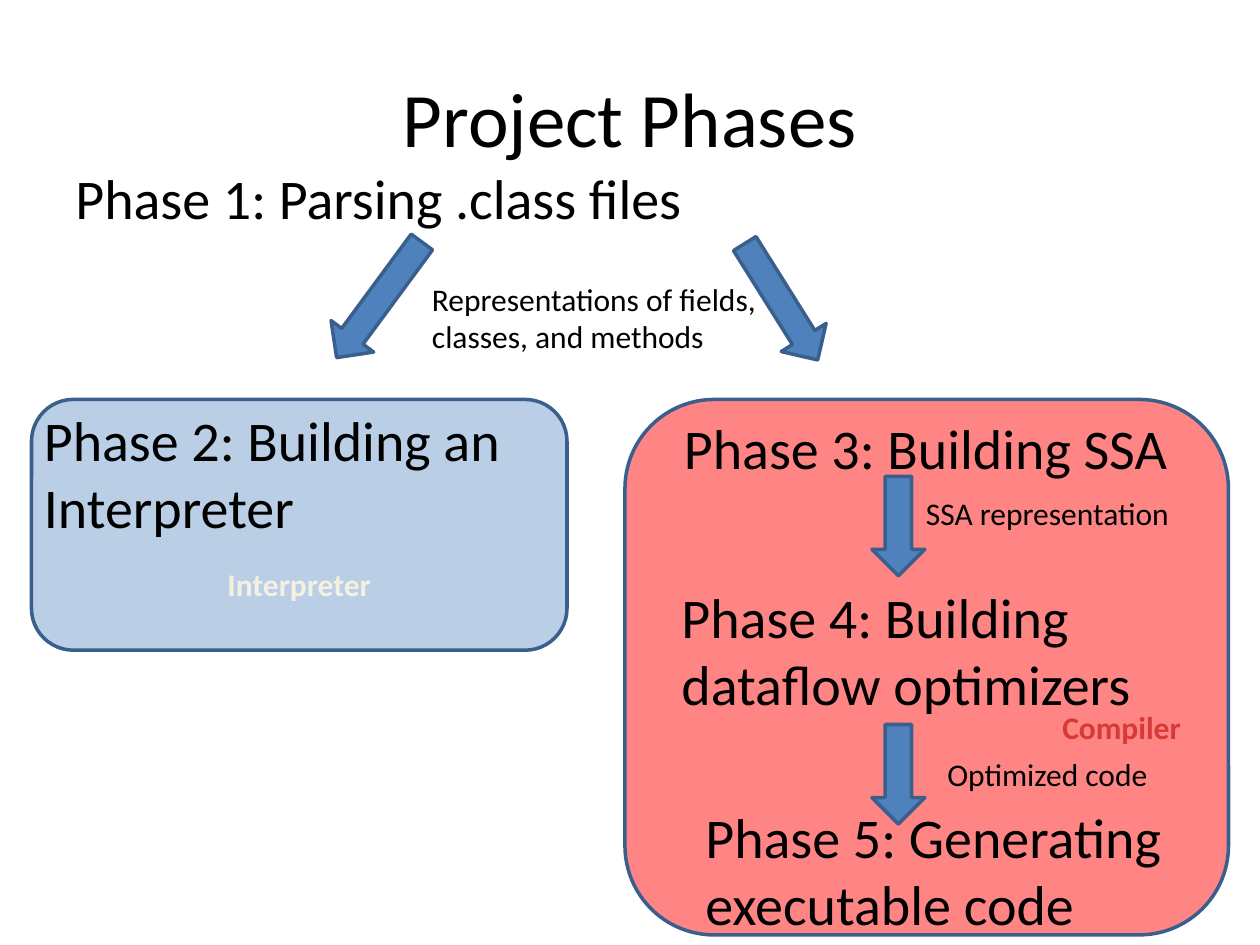
"""Build the Project Phases slide."""
from lxml import etree
from pptx import Presentation
from pptx.dml.color import RGBColor
from pptx.enum.shapes import MSO_SHAPE as SHAPE
from pptx.enum.text import MSO_ANCHOR as ANCHOR, PP_ALIGN as ALIGN
from pptx.oxml.ns import qn
from pptx.util import Inches, Pt

COLORS = {
    "black": "000000",
    "blue": "4F81BD",
    "outline": "3A5F8C",
    "red": "FF0000",
    "cream": "F4F1E3",
    "compiler": "D73A36",
}
FONT = "Calibri"


def rgb(name):
    """Return a palette colour."""
    return RGBColor.from_string(COLORS[name])


def write(tf, text, size, color="black", bold=False, align=ALIGN.LEFT):
    """Set and format the text of a one-paragraph frame."""
    tf.text = text
    p = tf.paragraphs[0]
    p.alignment = align
    font = p.runs[0].font
    font.name, font.size, font.bold = FONT, Pt(size), bold
    font.color.rgb = rgb(color)


def add_text(slide, box, text, size=32, wrap=True, align=ALIGN.LEFT, anchor=ANCHOR.TOP):
    """Add a text box."""
    tf = slide.shapes.add_textbox(*map(Inches, box)).text_frame
    tf.word_wrap = wrap
    tf.vertical_anchor = anchor
    write(tf, text, size, align=align)


def add_outlined(slide, kind, box, fill):
    """Add a filled shape with the common outline."""
    sp = slide.shapes.add_shape(kind, *map(Inches, box))
    sp.shadow.inherit = False
    sp.fill.solid()
    sp.fill.fore_color.rgb = rgb(fill)
    sp.line.color.rgb = rgb("outline")
    sp.line.width = Pt(2)
    return sp


def add_group_box(slide, box, fill, opacity, label, color, align):
    """Add a translucent rounded box with its label below the middle."""
    sp = add_outlined(slide, SHAPE.ROUNDED_RECTANGLE, box, fill)
    clr = sp.fill._xPr.find(qn("a:solidFill"))[0]
    etree.SubElement(clr, qn("a:alpha")).set("val", str(opacity * 1000))
    tf = sp.text_frame
    tf.vertical_anchor = ANCHOR.MIDDLE
    tf.margin_top = Inches(0.99)
    tf.margin_right = Inches(0.17 if align == ALIGN.RIGHT else 0.1)
    write(tf, label, 18, color, True, align)


def add_arrow(slide, left, top, height, rotation=0):
    """Add a block arrow pointing down before rotation."""
    sp = add_outlined(slide, SHAPE.DOWN_ARROW, (left, top, 0.42, height), "blue")
    sp.rotation = rotation


def main():
    """Build and save the slide."""
    prs = Presentation()
    prs.slide_width, prs.slide_height = Inches(10), Inches(7.5)
    slide = prs.slides.add_slide(prs.slide_layouts[6])

    add_group_box(slide, (0.25, 3.17, 4.25, 1.99), "blue", 39,
                  "Interpreter", "cream", ALIGN.CENTER)
    add_group_box(slide, (4.96, 3.17, 4.79, 4.25), "red", 48,
                  "Compiler", "compiler", ALIGN.RIGHT)

    add_text(slide, (0.5, 0.3, 9, 1.25), "Project Phases", 44,
             align=ALIGN.CENTER, anchor=ANCHOR.MIDDLE)

    for left, top, height, rotation in (
        (2.8, 1.81, 1.14, 36.4),
        (5.99, 1.85, 1.09, 327.9),
        (6.92, 3.78, 0.79, 0),
        (6.92, 5.75, 0.79, 0),
    ):
        add_arrow(slide, left, top, height, rotation)

    for box, text in (
        ((0.5, 1.25, 9, 0.64), "Phase 1: Parsing .class files"),
        ((0.25, 3.17, 3.83, 1.18), "Phase 2: Building an Interpreter"),
        ((5.33, 3.23, 4.17, 0.64), "Phase 3: Building SSA"),
        ((5.31, 4.57, 4.17, 1.18), "Phase 4: Building dataflow optimizers"),
        ((5.5, 6.32, 3.84, 1.18), "Phase 5: Generating executable code"),
    ):
        add_text(slide, box, text)

    for box, text, wrap in (
        ((3.33, 2.17, 3.08, 0.71), "Representations of fields, classes, and methods", True),
        ((7.25, 3.87, 2.15, 0.4), "SSA representation", False),
        ((7.42, 5.94, 1.81, 0.4), "Optimized code", False),
    ):
        add_text(slide, box, text, 18, wrap)

    prs.save("out.pptx")


if __name__ == "__main__":
    main()
